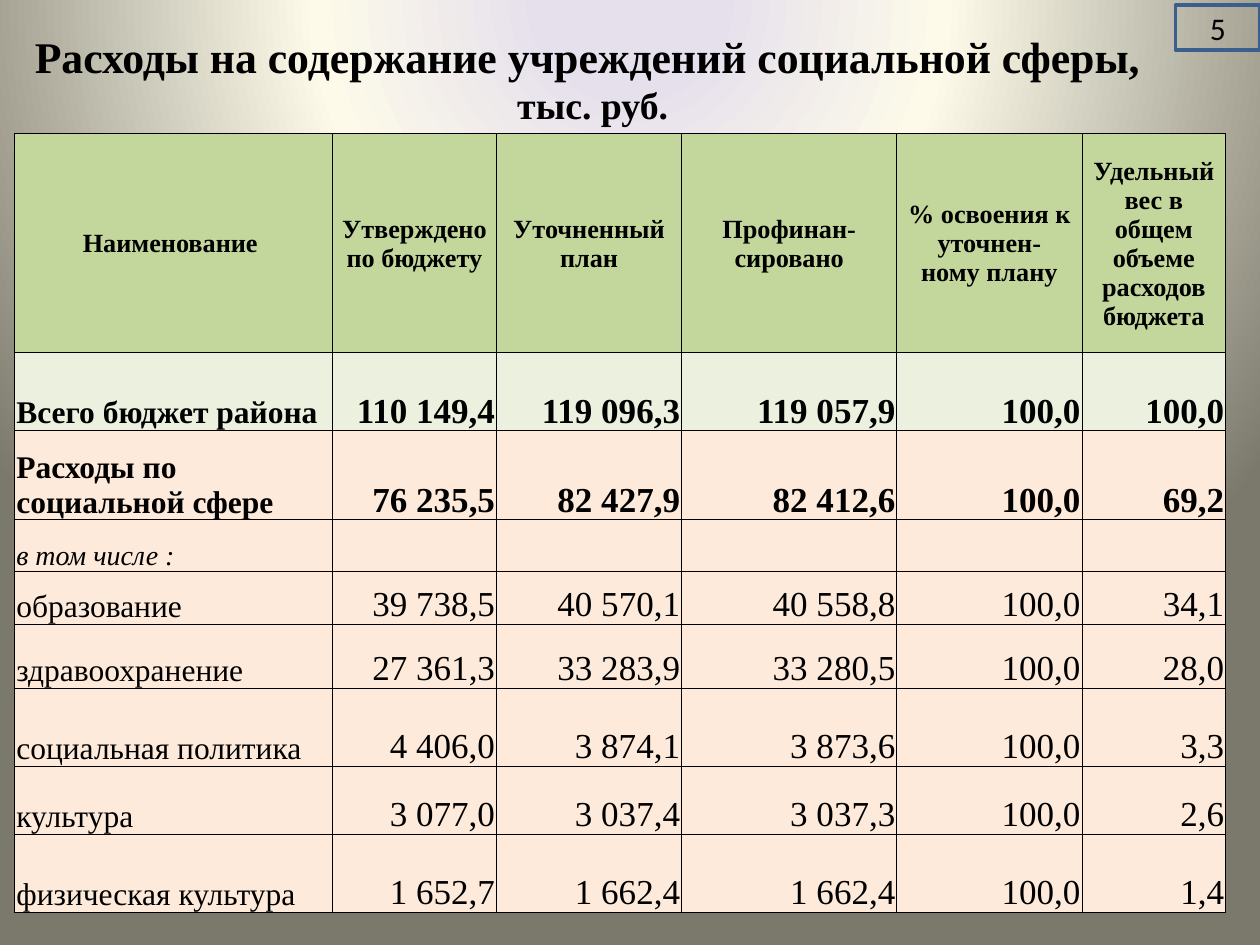
from dataclasses import dataclass

from lxml.etree import SubElement as Sub
from pptx import Presentation as Deck
from pptx.dml.color import RGBColor as Rgb
from pptx.enum.shapes import MSO_SHAPE as Kind
from pptx.enum.text import MSO_ANCHOR as Anchor, MSO_AUTO_SIZE as Auto, PP_ALIGN as Align
from pptx.oxml import parse_xml
from pptx.oxml.ns import nsdecls, qn
from pptx.util import Cm, Pt


@dataclass(frozen=True)
class Theme:
    serif: str = "Times New Roman"
    sans: str = "Calibri"
    ink: str = "000000"
    head: str = "C3D69B"
    total: str = "EBF1DE"
    body: str = "FDEADA"
    edge: str = "3A5F8C"
    glow: tuple = ((11, "E6E0EC"), (40, "FDFAEA"), (100, "7B796B"))
    title_pt: float = 25
    unit_pt: float = 21.6
    head_pt: float = 15
    note_pt: float = 16
    name_pt: float = 18
    value_pt: float = 20
    grid_pt: float = 0.5
    edge_pt: float = 2


HEADS = ["Наименование ", "Утверждено по бюджету", "Уточненный план",
         "Профинан-сировано", "% освоения к уточнен-\nному плану",
         "Удельный вес в общем объеме расходов бюджета"]
ROWS = [
    ["Всего бюджет района", "110 149,4", "119 096,3", "119 057,9", "100,0", "100,0"],
    ["Расходы по социальной сфере", "76 235,5", "82 427,9", "82 412,6", "100,0", "69,2"],
    ["в том числе :", "", "", "", "", ""],
    ["образование", "39 738,5", "40 570,1", "40 558,8", "100,0", "34,1"],
    ["здравоохранение", "27 361,3", "33 283,9", "33 280,5", "100,0", "28,0"],
    ["социальная политика", "4 406,0", "3 874,1", "3 873,6", "100,0", "3,3"],
    ["культура", "3 077,0", "3 037,4", "3 037,3", "100,0", "2,6"],
    ["физическая культура", "1 652,7", "1 662,4", "1 662,4", "100,0", "1,4"],
]
WIDTHS = [6.4, 3.31, 3.73, 4.34, 3.73, 2.9]
HEIGHTS = [4.42, 1.57, 1.8, 1.04, 1.06, 1.3, 1.57, 1.37, 1.57]
TOTAL, SOCIAL, NOTE = 1, 2, 3


def apply(item, **form):
    for key, value in form.items():
        setattr(item, key, value)


class Page:
    def __init__(self, deck, theme):
        self.theme = theme
        self.slide = deck.slides.add_slide(deck.slide_layouts[5])

    def font(self, item, size, name=None, **form):
        apply(item.font, size=Pt(size), name=name or self.theme.serif, **form)
        item.font.color.rgb = Rgb.from_string(self.theme.ink)

    def back(self):
        """Fill the background with a circular glow centred above the slide."""
        stops = "".join(f'<a:gs pos="{pos * 1000}"><a:srgbClr val="{tone}"/></a:gs>'
                        for pos, tone in self.theme.glow)
        part = parse_xml(
            f'<p:bg {nsdecls("p", "a")}><p:bgPr><a:gradFill rotWithShape="1">'
            f'<a:gsLst>{stops}</a:gsLst><a:path path="circle"><a:fillToRect '
            'l="50000" t="-80000" r="50000" b="180000"/></a:path></a:gradFill>'
            '<a:effectLst/></p:bgPr></p:bg>')
        self.slide.element.cSld.insert(0, part)

    def title(self, text, unit, box):
        shape = self.slide.shapes.title
        apply(shape, **box)
        apply(shape.text_frame, word_wrap=True, auto_size=Auto.NONE,
              vertical_anchor=Anchor.BOTTOM)
        para = shape.text_frame.paragraphs[0]
        para.alignment = Align.CENTER
        for words, size in ((text, self.theme.title_pt), (unit, self.theme.unit_pt)):
            if para.runs:
                para.add_line_break()
            run = para.add_run()
            run.text = words
            self.font(run, size, bold=True)

    def grid(self, cell):
        props = cell._tc.get_or_add_tcPr()
        for side in "LRTB":
            line = Sub(props, qn(f"a:ln{side}"), w=str(Pt(self.theme.grid_pt)))
            fill = Sub(line, qn("a:solidFill"))
            Sub(fill, qn("a:srgbClr"), val=self.theme.ink)

    def cell(self, cell, text, tone, align, anchor, size, **form):
        self.grid(cell)
        apply(cell, text=text, vertical_anchor=anchor, margin_left=Cm(0.03),
              margin_right=Cm(0.03), margin_top=Cm(0.03), margin_bottom=0)
        cell.fill.solid()
        cell.fill.fore_color.rgb = Rgb.from_string(tone)
        for para in cell.text_frame.paragraphs:
            para.alignment = align
            for item in (para, *para.runs):
                self.font(item, size, **form)

    def look(self, row, col):
        """Return the format values of the table cell at row and col."""
        theme = self.theme
        if row == 0:
            return dict(tone=theme.head, align=Align.CENTER, anchor=Anchor.MIDDLE,
                        size=theme.head_pt, bold=True)
        form = dict(tone=theme.total if row == TOTAL else theme.body,
                    align=Align.RIGHT, anchor=Anchor.BOTTOM,
                    size=theme.value_pt, bold=row <= SOCIAL)
        if row == NOTE:
            form.update(size=theme.note_pt, italic=True)
        elif col == 0:
            form.update(size=theme.name_pt)
        if col == 0:
            form.update(align=Align.JUSTIFY if row > NOTE else Align.LEFT)
        return form

    def table(self, data, left, top):
        table = self.slide.shapes.add_table(
            len(data), len(WIDTHS), left, top,
            Cm(sum(WIDTHS)), Cm(sum(HEIGHTS))).table
        apply(table, first_row=False, horz_banding=False)
        for col, width in zip(table.columns, WIDTHS):
            col.width = Cm(width)
        for row, height in zip(table.rows, HEIGHTS):
            row.height = Cm(height)
        for i, line in enumerate(data):
            for j, text in enumerate(line):
                self.cell(table.cell(i, j), text, **self.look(i, j))

    def number(self, text, *box):
        shape = self.slide.shapes.add_shape(Kind.RECTANGLE, *box)
        shape.shadow.inherit = False
        shape.fill.background()
        shape.line.color.rgb = Rgb.from_string(self.theme.edge)
        shape.line.width = Pt(self.theme.edge_pt)
        apply(shape.text_frame, text=text, vertical_anchor=Anchor.MIDDLE)
        para = shape.text_frame.paragraphs[0]
        para.alignment = Align.CENTER
        self.font(para.runs[0], self.theme.name_pt, self.theme.sans)


def main():
    deck = Deck()
    apply(deck, slide_width=Cm(25.4), slide_height=Cm(19.05))
    page = Page(deck, Theme())
    page.back()
    page.title("Расходы на содержание учреждений социальной сферы, ", "тыс. руб.",
               dict(left=Cm(0.3), top=Cm(0.3), width=Cm(23.3), height=Cm(2.39)))
    page.table([HEADS, *ROWS], Cm(0.3), Cm(2.69))
    page.number("5", Cm(23.7), Cm(0.1), Cm(1.7), Cm(0.91))
    deck.save("out.pptx")


if __name__ == "__main__":
    main()
